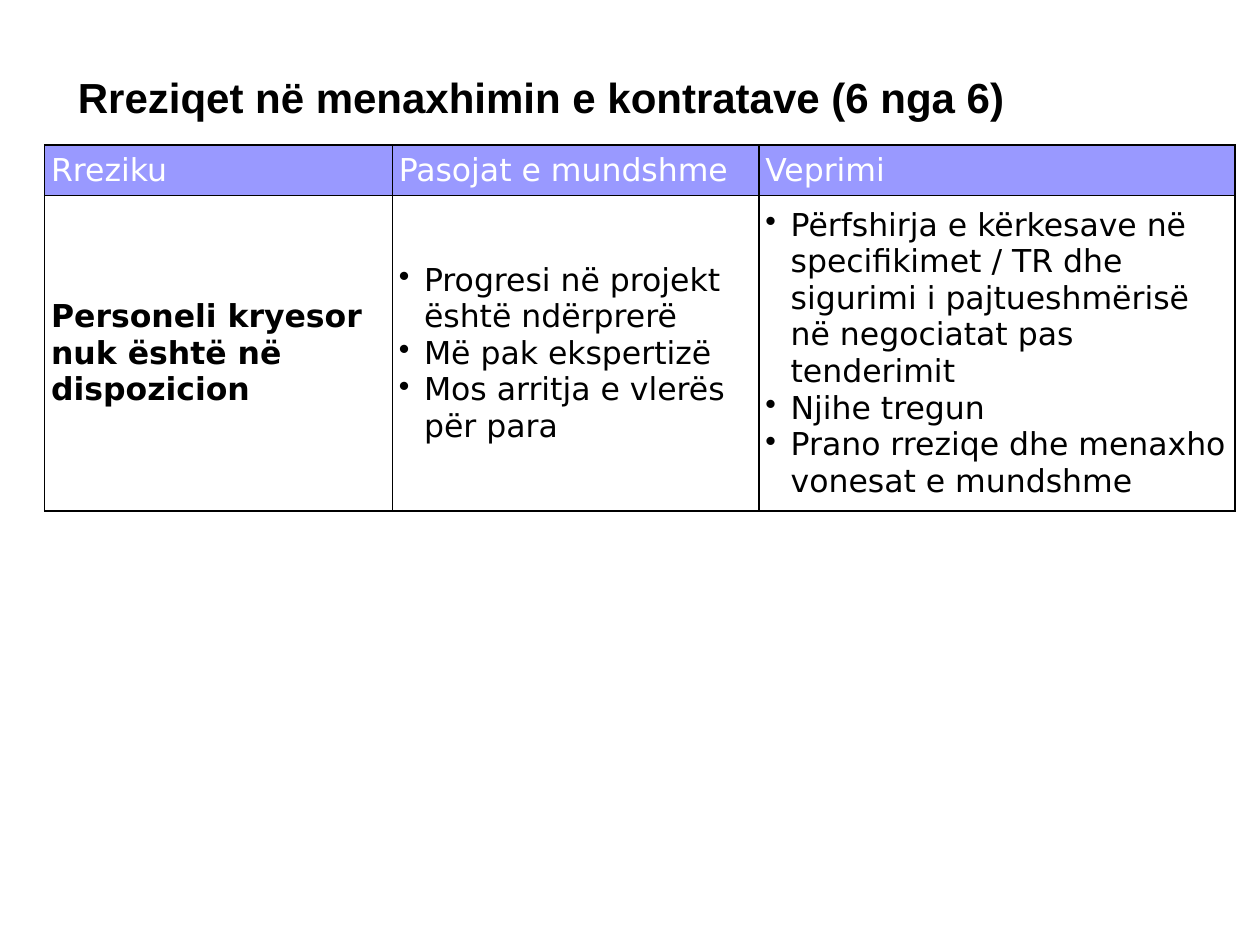
import pptx
import pptx.dml.color
import pptx.enum.text
import pptx.oxml
import pptx.oxml.ns
import pptx.util
from lxml import etree

Cm, Pt = pptx.util.Cm, pptx.util.Pt
qn = pptx.oxml.ns.qn
MIDDLE = pptx.enum.text.MSO_ANCHOR.MIDDLE

COLORS = {"text": "000000", "header": "9999FF", "header_text": "FFFFFF",
          "body": "FFFFFF", "border": "000000"}
TITLE = {"name": "Arial", "size": Pt(24), "bold": True}
CELL = {"name": "DejaVu Sans", "size": Pt(18), "bold": False}

HEADERS = ["Rreziku", "Pasojat e mundshme", "Veprimi"]
RISK = "Personeli kryesor nuk është në dispozicion"
EFFECTS = ["Progresi në projekt është ndërprerë",
           "Më pak ekspertizë",
           "Mos arritja e vlerës për para"]
ACTIONS = ["Përfshirja e kërkesave në specifikimet / TR dhe sigurimi i "
           "pajtueshmërisë në negociatat pas tenderimit",
           "Njihe tregun",
           "Prano rreziqe dhe menaxho vonesat e mundshme"]


def rgb(key):
    return pptx.dml.color.RGBColor.from_string(COLORS[key])


def add_text(p, text, style, color):
    r = p.add_run()
    r.text = text
    for name, value in style.items():
        setattr(r.font, name, value)
    r.font.color.rgb = rgb(color)


def add_bullet(p, indent):
    pPr = p._p.get_or_add_pPr()
    pPr.set("marL", str(indent))
    pPr.set("indent", str(-indent))
    etree.SubElement(pPr, qn("a:buChar")).set("char", "•")


def add_borders(cell):
    tcPr = cell._tc.get_or_add_tcPr()
    for i, side in enumerate(("lnL", "lnR", "lnT", "lnB")):
        ln = etree.Element(qn("a:" + side), w=str(Pt(1)))
        fill = etree.SubElement(ln, qn("a:solidFill"))
        etree.SubElement(fill, qn("a:srgbClr"), val=COLORS["border"])
        tcPr.insert(i, ln)


def fill_cell(cell, lines, fill, color, bold=False, bullets=False):
    cell.vertical_anchor = MIDDLE
    for side in ("left", "right", "top", "bottom"):
        setattr(cell, "margin_" + side, Cm(0.13))
    cell.fill.solid()
    cell.fill.fore_color.rgb = rgb(fill)
    add_borders(cell)
    tf = cell.text_frame
    for i, line in enumerate(lines):
        p = tf.add_paragraph() if i else tf.paragraphs[0]
        if bullets:
            add_bullet(p, Cm(0.51))
        add_text(p, line, {**CELL, "bold": bold}, color)


def add_title(s, left, top, width, height):
    tf = s.shapes.add_textbox(left, top, width, height).text_frame
    tf.word_wrap = True
    add_text(tf.paragraphs[0], "Rreziqet në menaxhimin e kontratave (6 nga 6)",
             TITLE, "text")


def add_risk_table(s, left, top, width, height):
    table = s.shapes.add_table(2, 3, left, top, width, height).table
    # Columns share the width; the body row takes what the header leaves
    shares = (2.76, 2.91, 3.78)
    for column, share in zip(table.columns, shares):
        column.width = int(width * share / sum(shares))
    table.rows[0].height = Cm(1.02)
    table.rows[1].height = height - Cm(1.02)

    # Header row
    for i, header in enumerate(HEADERS):
        fill_cell(table.cell(0, i), [header], "header", "header_text")

    # Risk, its effects and the actions
    fill_cell(table.cell(1, 0), [RISK], "body", "text", bold=True)
    for i, lines in enumerate((EFFECTS, ACTIONS), 1):
        fill_cell(table.cell(1, i), lines, "body", "text", bullets=True)


def main():
    prs = pptx.Presentation()
    prs.slide_width, prs.slide_height = Cm(25.4), Cm(19.05)
    s = prs.slides.add_slide(prs.slide_layouts[6])
    add_title(s, Cm(1.32), Cm(1.32), Cm(23.2), Cm(1.27))
    add_risk_table(s, Cm(0.9), Cm(2.92), Cm(24), Cm(7.37))
    prs.save("out.pptx")


if __name__ == "__main__":
    main()
